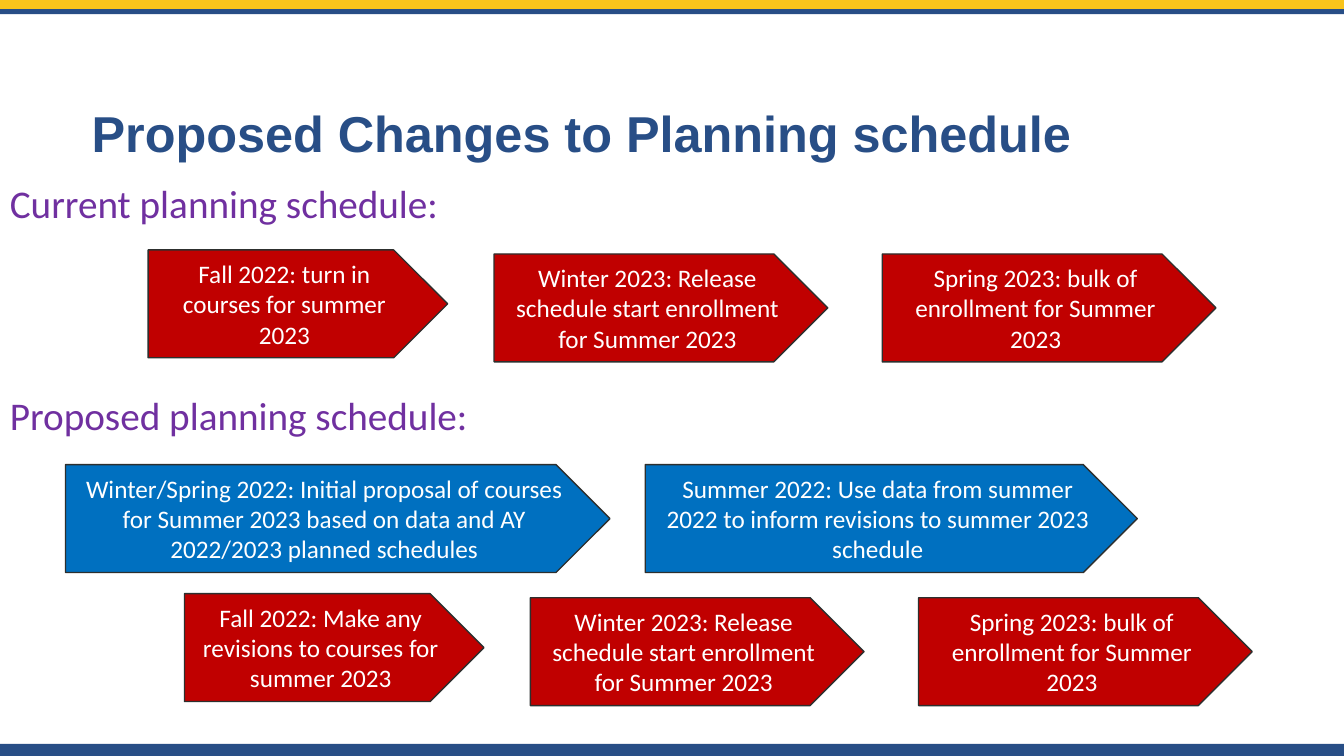
from pptx import Presentation
from pptx.dml.color import RGBColor
from pptx.enum.shapes import MSO_SHAPE
from pptx.enum.text import MSO_ANCHOR, PP_ALIGN
from pptx.util import Inches, Pt

WIDTH, HEIGHT = 13.33, 7.5
NAVY, GOLD, RED, BLUE = "284E86", "F9C41B", "C00000", "0070C0"
PURPLE, OUTLINE, WHITE = "7030A0", "2D2F2E", "FFFFFF"
ARROW_HEIGHT = 1.07

# left, top, width, height, colour
BANDS = [
    (0, HEIGHT - 0.12, WIDTH, 0.12, NAVY),
    (0, 0, WIDTH, 0.12, GOLD),
    (0, 0.09, WIDTH, 0.05, NAVY),
]
TITLE = "Proposed Changes to Planning schedule"
TITLE_FONT = {"name": "Arial", "size": Pt(36), "bold": True}
HEADING_FONT = {"name": "Calibri", "size": Pt(28)}
STEP_FONT = {"name": "Calibri", "size": Pt(18)}

# text, top, width
HEADINGS = [
    ("Current planning schedule:", 1.73, 4.5),
    ("Proposed planning schedule:", 3.83, 4.79),
]
RELEASE = "Winter 2023: Release schedule start enrollment for Summer 2023"
ENROLLMENT = "Spring 2023: bulk of enrollment for Summer 2023"

# Offset from the row's left and top, then width
TERM_SLOTS = [(0, 0, 2.97), (3.43, 0.04, 3.31), (7.28, 0.04, 3.31)]
EARLY_SLOTS = [(0, 0, 5.4), (5.75, 0, 4.88)]

# left, top, colour, slots, steps
ROWS = [
    (1.47, 2.48, RED, TERM_SLOTS,
     ["Fall 2022: turn in courses for summer 2023", RELEASE, ENROLLMENT]),
    (1.83, 5.89, RED, TERM_SLOTS,
     ["Fall 2022: Make any revisions to courses for summer 2023", RELEASE, ENROLLMENT]),
    (0.65, 4.61, BLUE, EARLY_SLOTS,
     ["Winter/Spring 2022: Initial proposal of courses for Summer 2023 "
      "based on data and AY 2022/2023 planned schedules",
      "Summer 2022: Use data from summer 2022 to inform revisions to summer 2023 schedule"]),
]


def paint(color_format, color):
    color_format.rgb = RGBColor.from_string(color)


def write(shape, text, font_values, color, align=PP_ALIGN.LEFT, anchor=MSO_ANCHOR.MIDDLE):
    frame = shape.text_frame
    frame.vertical_anchor = anchor
    paragraph = frame.paragraphs[0]
    paragraph.alignment = align
    run = paragraph.add_run()
    run.text = text
    for attribute, value in font_values.items():
        setattr(run.font, attribute, value)
    paint(run.font.color, color)
    return paragraph


def add_block(slide, preset, box, color):
    block = slide.shapes.add_shape(preset, *map(Inches, box))
    block.shadow.inherit = False
    block.fill.solid()
    paint(block.fill.fore_color, color)
    block.line.fill.background()
    return block


def add_step(slide, box, color, text):
    step = add_block(slide, MSO_SHAPE.PENTAGON, box, color)
    paint(step.line.color, OUTLINE)
    step.line.width = Pt(1)
    write(step, text, STEP_FONT, WHITE, PP_ALIGN.CENTER)


def main():
    deck = Presentation()
    deck.slide_width, deck.slide_height = Inches(WIDTH), Inches(HEIGHT)
    slide = deck.slides.add_slide(deck.slide_layouts[6])

    for *box, color in BANDS:
        add_block(slide, MSO_SHAPE.RECTANGLE, box, color)

    title = slide.shapes.add_textbox(*map(Inches, (0.81, 0.82, 12.52, 1.07)))
    title.text_frame.word_wrap = True
    write(title, TITLE, TITLE_FONT, NAVY).line_spacing = 0.9

    for left, top, color, slots, steps in ROWS:
        for (across, down, width), text in zip(slots, steps):
            add_step(slide, (left + across, top + down, width, ARROW_HEIGHT), color, text)

    for text, top, width in HEADINGS:
        heading = slide.shapes.add_textbox(*map(Inches, (0, top, width, 0.57)))
        heading.text_frame.word_wrap = False
        write(heading, text, HEADING_FONT, PURPLE, anchor=MSO_ANCHOR.TOP)

    deck.save("out.pptx")


if __name__ == "__main__":
    main()
